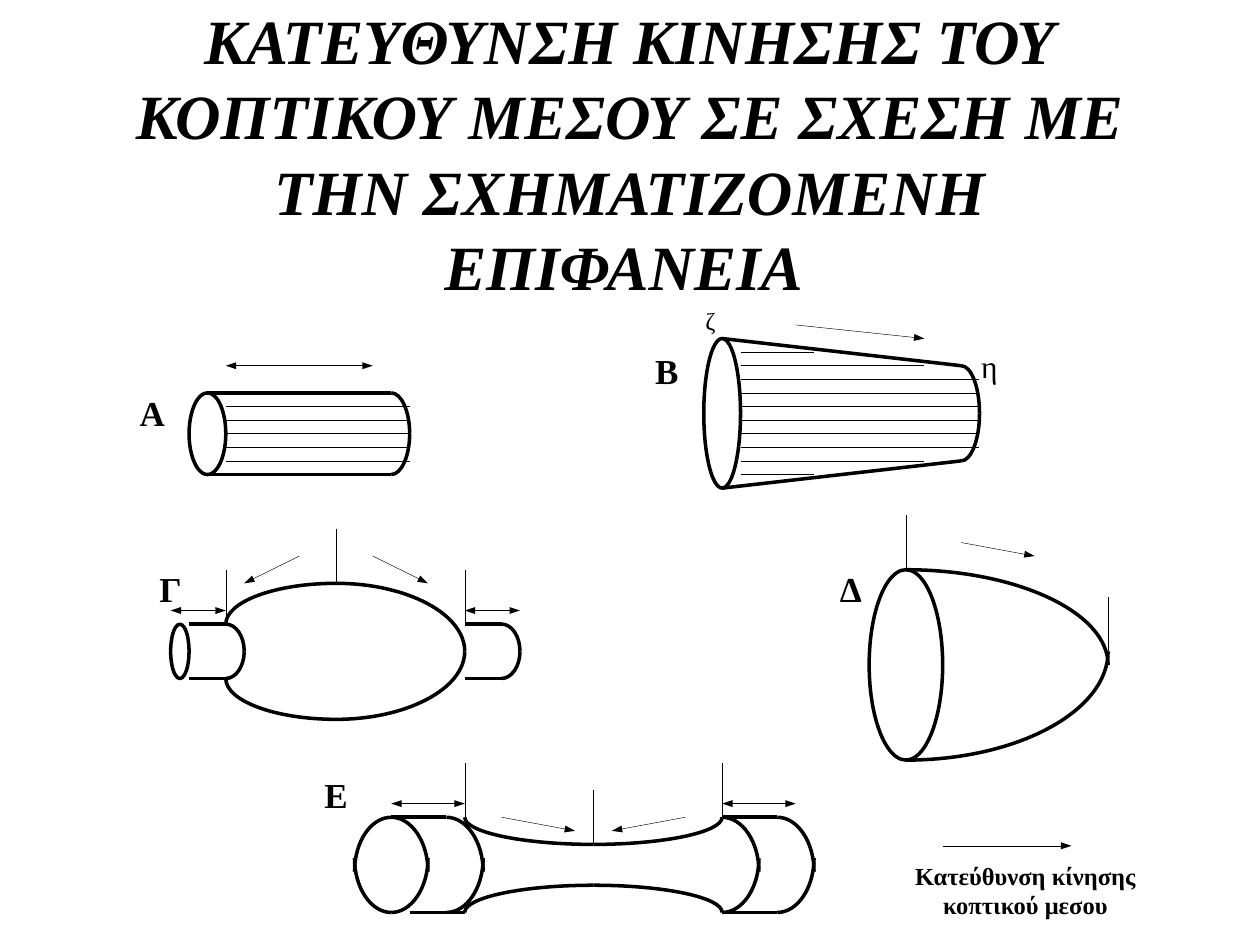
"""Build the slide on cutting-tool direction for five turned surfaces."""
from dataclasses import dataclass

from lxml.etree import SubElement
from pptx import Presentation
from pptx.dml.color import RGBColor
from pptx.enum.shapes import MSO_CONNECTOR, MSO_SHAPE
from pptx.enum.text import MSO_ANCHOR, PP_ALIGN
from pptx.oxml.ns import qn
from pptx.util import Cm, Pt


@dataclass(frozen=True)
class Theme:
    ink: RGBColor = RGBColor(0, 0, 0)
    font: str = "Times New Roman"
    title: Pt = Pt(36)
    letter: Pt = Pt(20)
    mark: Pt = Pt(18)
    small: Pt = Pt(14)
    thick: Pt = Pt(2)
    thin: Pt = Pt(0.25)


theme = Theme()
COLUMN, ROW = 18.9 / 51, 3.29 / 12
LEFT, TOP = 3.44, 6.55
SPOOL = 36.2
BULGE = 0.55

deck = Presentation()
deck.slide_width, deck.slide_height = Cm(25.4), Cm(19.05)
slide = deck.slides.add_slide(deck.slide_layouts[6])
shapes = slide.shapes


def grid(column, row):
    return Cm(LEFT + column * COLUMN), Cm(TOP + row * ROW)


def write(text, box, size, bold=True, italic=False, align=PP_ALIGN.CENTER, inset=0.03):
    frame = shapes.add_textbox(*box).text_frame
    frame.word_wrap = True
    frame.margin_left = frame.margin_right = Cm(inset)
    frame.margin_top = frame.margin_bottom = Cm(inset)
    frame.text = text
    paragraph = frame.paragraphs[0]
    paragraph.alignment = align
    font = paragraph.runs[0].font
    font.name, font.size, font.bold, font.italic = theme.font, size, bold, italic
    font.color.rgb = theme.ink
    return frame


title = write(
    "ΚΑΤΕΥΘΥΝΣΗ ΚΙΝΗΣΗΣ ΤΟΥ ΚΟΠΤΙΚΟΥ ΜΕΣΟΥ ΣΕ ΣΧΕΣΗ ΜΕ ΤΗΝ ΣΧΗΜΑΤΙΖΟΜΕΝΗ ΕΠΙΦΑΝΕΙΑ ",
    (Cm(1.9), Cm(1.48), Cm(21.59), Cm(3.18)), theme.title, italic=True, inset=0.25)
title.vertical_anchor = MSO_ANCHOR.MIDDLE

labels = [
    ("Α", -3, 4.75, 4, 3, theme.letter, True, PP_ALIGN.CENTER),
    ("Β", 25, 1.7, 4, 3, theme.letter, True, PP_ALIGN.CENTER),
    ("Γ", -2, 17.7, 4, 3, theme.letter, True, PP_ALIGN.CENTER),
    ("Δ", 35, 17.7, 4, 3, theme.letter, True, PP_ALIGN.CENTER),
    ("Ε", 7, 32.9, 4, 3, theme.letter, True, PP_ALIGN.CENTER),
    ("ζ", 29, -1.5, 2, 2, theme.small, False, PP_ALIGN.LEFT),
    ("η", 44, 1.5, 2, 2, theme.mark, False, PP_ALIGN.LEFT),
    ("Κατεύθυνση κίνησης κοπτικού μεσου", 40, 39.3, 13, 4, theme.small, True, PP_ALIGN.CENTER),
]
for text, column, row, columns, rows, size, bold, align in labels:
    box = (*grid(column, row), Cm(columns * COLUMN), Cm(rows * ROW))
    write(text, box, size, bold, align=align)

end_faces = [(1, 5, 2, 6), (29, 1, 2, 11), (0, 22, 1, 4), (38, 18, 4, 14)]
for column, row, columns, rows in end_faces:
    face = shapes.add_shape(MSO_SHAPE.OVAL, *grid(column, row), Cm(columns * COLUMN), Cm(rows * ROW))
    face.shadow.inherit = False
    face.fill.background()
    face.line.color.rgb, face.line.width = theme.ink, theme.thick

quarter_arcs = [
    (12, 5, 13, 8), (12, 11, 13, 8),
    (43, 3, 44, 6.5), (43, 10, 44, 6.5),
    (40, 18, 51, 25), (40, 32, 51, 24),
    (9, 19, 3, 22), (9, 19, 16, 24), (9, 29, 3, 26), (9, 29, 16, 24),
]
for column in (3, 18):
    quarter_arcs += [(column, 22, column + 1, 24), (column, 26, column + 1, 24)]
for column, reach in ((12, -2), (12, 2), (15, 2), (30, 2), (33, 2)):
    quarter_arcs += [(column, SPOOL, column + reach, SPOOL + 4),
                     (column, SPOOL + 7, column + reach, SPOOL + 3)]
for side in (16, 30):
    quarter_arcs += [(23, SPOOL + 2, side, SPOOL), (23, SPOOL + 5, side, SPOOL + 7)]
for crown_column, crown_row, side_column, side_row in quarter_arcs:
    columns, rows = side_column - crown_column, side_row - crown_row
    outline = shapes.build_freeform(*grid(crown_column, crown_row))
    outline.add_line_segments([
        grid(crown_column + BULGE * columns, crown_row),
        grid(side_column, side_row - BULGE * rows),
        grid(side_column, side_row)], close=False)
    arc = outline.convert_to_shape()
    arc.shadow.inherit = False
    arc.fill.background()
    arc.line.color.rgb, arc.line.width = theme.ink, theme.thick
    drawing = next(arc._element.iter(qn("a:path")))
    straight_parts = drawing.findall(qn("a:lnTo"))
    curve = SubElement(drawing, qn("a:cubicBezTo"))
    for part in straight_parts:
        curve.append(part[0])
        drawing.remove(part)

edges = [
    (2, 5, 12, 5), (2, 11, 12, 11),
    (30, 1, 43, 3), (30, 12, 43, 10),
    (12, SPOOL, 15, SPOOL), (13, SPOOL + 7, 16, SPOOL + 7),
    (30, SPOOL, 33, SPOOL), (30, SPOOL + 7, 33, SPOOL + 7),
]
for row in (22, 26):
    edges += [(1, row, 3, row), (16, row, 18, row)]

guides = [(column, row, column, row + 4) for column, row in (
    (3, 18), (9, 15), (16, 18), (40, 14), (51, 20),
    (16, SPOOL - 4), (23, SPOOL - 2), (30, SPOOL - 4))]
guides += [(3, row, 13, row) for row in range(6, 11)]
guides += [(31, row, 44, row) for row in range(4, 10)]
guides += [(31, row, 41, row) for row in (3, 10)]
guides += [(31, row, 35, row) for row in (2, 11)]

one_way = [
    (34, 0, 41, 1), (43, 16, 47, 17), (7, 17, 4, 19), (11, 17, 14, 19),
    (18, SPOOL, 22, SPOOL + 1), (28, SPOOL, 24, SPOOL + 1), (42, 38.3, 49, 38.3),
]
two_way = [
    (3, 3, 11, 3), (0, 21, 3, 21), (16, 21, 19, 21),
    (12, SPOOL - 1, 16, SPOOL - 1), (30, SPOOL - 1, 34, SPOOL - 1),
]
strokes = [
    (edges, theme.thick, ()),
    (guides, theme.thin, ()),
    (one_way, theme.thin, ("a:tailEnd",)),
    (two_way, theme.thin, ("a:headEnd", "a:tailEnd")),
]
for segments, weight, arrowheads in strokes:
    for start_column, start_row, end_column, end_row in segments:
        stroke = shapes.add_connector(
            MSO_CONNECTOR.STRAIGHT, *grid(start_column, start_row), *grid(end_column, end_row))
        stroke.line.color.rgb, stroke.line.width = theme.ink, weight
        for arrowhead in arrowheads:
            SubElement(stroke.line._get_or_add_ln(), qn(arrowhead), type="triangle", w="sm", len="med")
        SubElement(stroke._element.spPr, qn("a:effectLst"))

deck.save("out.pptx")
